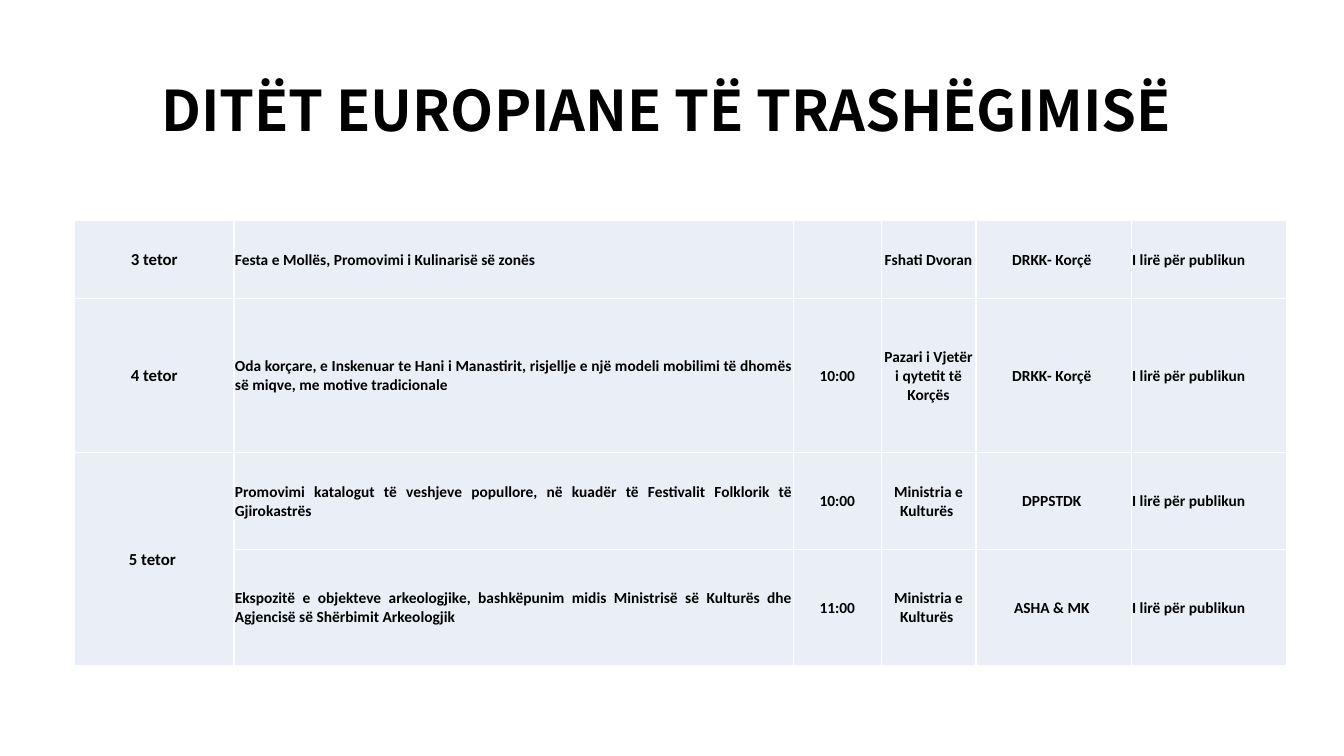
"""Build the European Heritage Days programme slide."""
from lxml import etree
from pptx import Presentation
from pptx.dml.color import RGBColor
from pptx.enum.text import MSO_ANCHOR, MSO_AUTO_SIZE, PP_ALIGN
from pptx.oxml.ns import qn
from pptx.util import Inches, Pt

CENTER, JUSTIFY, LEFT = PP_ALIGN.CENTER, PP_ALIGN.JUSTIFY, PP_ALIGN.LEFT
MIDDLE = MSO_ANCHOR.MIDDLE
NO_AUTOFIT = MSO_AUTO_SIZE.NONE

COLORS = {"text": "000000", "cell": "EAEFF7", "border": "FFFFFF"}
TITLE = "DITËT EUROPIANE TË TRASHËGIMISË "
ENTRY = "I lirë për publikun"
EVENTS = [
    ("3 tetor", "Festa e Mollës, Promovimi i Kulinarisë së zonës",
     "", "Fshati Dvoran", "DRKK- Korçë ", ENTRY),
    ("4 tetor", "Oda korçare, e Inskenuar te Hani i Manastirit, risjellje e një "
     "modeli mobilimi të dhomës së miqve, me motive tradicionale ",
     "10:00", "Pazari i Vjetër i qytetit të Korçës", "DRKK- Korçë ", ENTRY),
    ("5 tetor ", "Promovimi katalogut të veshjeve popullore, në kuadër të "
     "Festivalit Folklorik të Gjirokastrës ",
     "10:00", "Ministria e Kulturës ", "DPPSTDK ", ENTRY),
    ("", "Ekspozitë e objekteve arkeologjike, bashkëpunim midis Ministrisë së "
     "Kulturës dhe Agjencisë së Shërbimit Arkeologjik",
     "11:00", "Ministria e Kulturës ", "ASHA & MK ", ENTRY),
]
COLUMNS = [(1.58, CENTER, 12), (5.55, JUSTIFY, 11), (0.87, CENTER, 11),
           (0.94, CENTER, 11), (1.54, CENTER, 11), (1.54, LEFT, 11)]
ROW_HEIGHTS = [0.77, 1.53, 0.96, 1.15]


def add_text(paragraph, text, size, font_name, align):
    paragraph.alignment = align
    run = paragraph.add_run()
    run.text = text
    run.font.size = Pt(size)
    run.font.name = font_name
    run.font.bold = True
    run.font.color.rgb = RGBColor.from_string(COLORS["text"])


def add_borders(cell):
    properties = cell._tc.get_or_add_tcPr()
    for side in ("lnL", "lnR", "lnT", "lnB"):
        line = etree.SubElement(properties, qn(f"a:{side}"), w=str(Pt(1)))
        fill = etree.SubElement(line, qn("a:solidFill"))
        etree.SubElement(fill, qn("a:srgbClr"), val=COLORS["border"])


def format_cell(cell):
    cell.vertical_anchor = MIDDLE
    cell.margin_left = cell.margin_right = cell.margin_top = Inches(0.01)
    cell.margin_bottom = 0
    add_borders(cell)
    cell.fill.solid()
    cell.fill.fore_color.rgb = RGBColor.from_string(COLORS["cell"])


def add_title(slide):
    title = slide.shapes.title
    title.left, title.top = Inches(0.92), Inches(0.4)
    title.width, title.height = Inches(11.5), Inches(1.45)
    frame = title.text_frame
    frame.auto_size = NO_AUTOFIT
    frame.vertical_anchor = MIDDLE
    frame.paragraphs[0].line_spacing = 0.9
    add_text(frame.paragraphs[0], TITLE, 40, "Noto Sans CJK KR", CENTER)


def add_programme(slide):
    programme = slide.shapes.add_table(
        len(EVENTS), len(COLUMNS), Inches(0.74), Inches(2.19),
        Inches(sum(width for width, _, _ in COLUMNS)),
        Inches(sum(ROW_HEIGHTS))).table
    programme.first_row = programme.horz_banding = False
    for column, (width, _, _) in zip(programme.columns, COLUMNS):
        column.width = Inches(width)
    for row, height, event in zip(programme.rows, ROW_HEIGHTS, EVENTS):
        row.height = Inches(height)
        for cell, text, (_, align, size) in zip(row.cells, event, COLUMNS):
            format_cell(cell)
            if text:
                add_text(cell.text_frame.paragraphs[0], text, size, "Calibri", align)
    programme.cell(2, 0).merge(programme.cell(3, 0))


def main():
    deck = Presentation()
    deck.slide_width, deck.slide_height = Inches(13.33), Inches(7.5)
    slide = deck.slides.add_slide(deck.slide_layouts[5])
    add_title(slide)
    add_programme(slide)
    deck.save("out.pptx")


if __name__ == "__main__":
    main()
